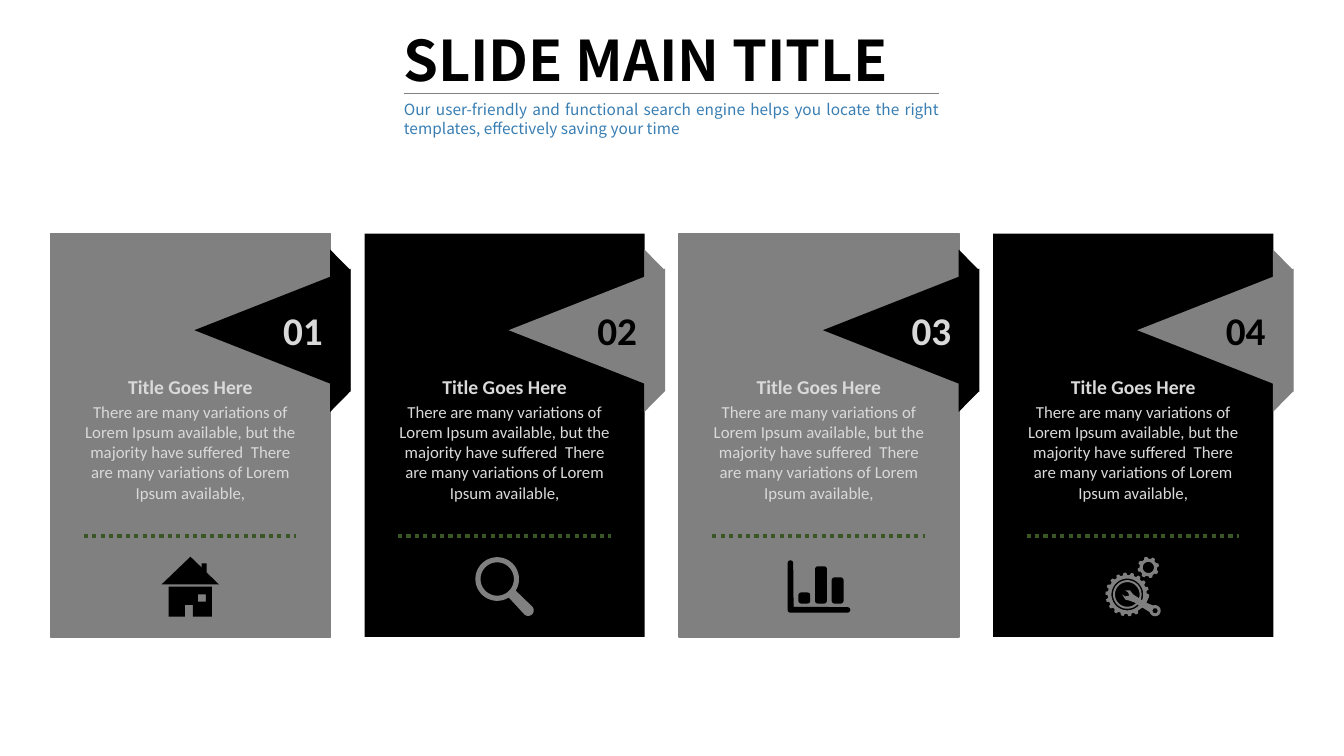
from copy import deepcopy
from math import cos, radians, sin

from pptx import Presentation
from pptx.dml.color import RGBColor
from pptx.enum import dml, shapes, text
from pptx.oxml.ns import qn
from pptx.oxml.xmlchemy import OxmlElement
from pptx.util import Cm, Pt

BLACK = RGBColor(0x00, 0x00, 0x00)
GRAY = RGBColor(0x80, 0x80, 0x80)
LIGHT = RGBColor(0xD9, 0xD9, 0xD9)
GREEN = RGBColor(0x38, 0x57, 0x23)
BLUE = RGBColor(0x39, 0x7E, 0xB3)

TITLE_FONT = "Noto Sans CJK SC"
CARD_LEFT, CARD_TOP, CARD_PITCH = 1.27, 5.89, 7.92
CARD_WIDTH, CARD_HEIGHT = 7.06, 10.16
ICON_Y = 14.78
CARD_TEXT = ("There are many variations of\vLorem Ipsum available, but the majority "
             "have suffered  There\vare many variations of Lorem\vIpsum available,")


# Outlines: points in cm around the icon centre
def arc(cx, cy, r, start=0, end=360, step=6):
    n = max(2, round(abs(end - start) / step))
    angles = [radians(start + (end - start) * i / n) for i in range(n + 1)]
    return [(cx + r * cos(a), cy + r * sin(a)) for a in angles]


def box(x1, y1, x2, y2):
    return [(x1, y1), (x2, y1), (x2, y2), (x1, y2)]


def round_box(x1, y1, x2, y2, r=0.07):
    corners = [(x1 + r, y1 + r, 180), (x2 - r, y1 + r, 270),
               (x2 - r, y2 - r, 0), (x1 + r, y2 - r, 90)]
    return [pt for cx, cy, a in corners for pt in arc(cx, cy, r, a, a + 90, 30)]


def cog(cx, cy, r, depth, teeth, start=0, end=360):
    pitch = 360 / teeth
    points = []
    for i in range(round((end - start) / pitch)):
        a = start + i * pitch
        points += arc(cx, cy, r - depth, a, a + pitch * 0.35)
        points += arc(cx, cy, r, a + pitch * 0.5, a + pitch * 0.85)
    return points


def house():
    roof = [(-0.73, -0.05), (0, -0.75), (0.28, -0.48), (0.28, -0.58),
            (0.41, -0.58), (0.41, -0.35), (0.72, -0.05)]
    walls = [(-0.55, 0), (0.54, 0), (0.54, 0.76), (0.06, 0.76),
             (0.06, 0.46), (-0.14, 0.46), (-0.14, 0.76), (-0.55, 0.76)]
    return [roof, walls, box(0.19, 0.2, 0.39, 0.38)]


def magnifier():
    rim = arc(-0.19, -0.19, 0.55, 58, 392)
    handle_end = arc(0.59, 0.6, 0.14, -45, 135)
    return [rim + handle_end, arc(-0.19, -0.19, 0.42)]


def bar_chart():
    axes = (arc(-0.72, -0.59, 0.07, 180, 360, 30) + [(-0.64, 0.51)]
            + arc(0.72, 0.59, 0.07, -90, 90, 30) + arc(-0.72, 0.59, 0.07, 90, 180, 30))
    bars = [(-0.52, 0.15), (-0.1, -0.51), (0.32, -0.23)]
    return [axes] + [round_box(x, y, x + 0.3, 0.43) for x, y in bars]


def gears():
    cx, cy = -0.15, 0.2
    wheel = cog(cx, cy, 0.55, 0.06, 18, 50, 370)
    handle = [(0.33, 0.41)] + arc(0.55, 0.61, 0.14, -110, 165) + [(0.23, 0.53)]
    groove = arc(cx, cy, 0.4, 43, 382) + arc(cx, cy, 0.36, 380, 45)
    wrench = [(-0.08, 0.36), (-0.2, 0.33), (-0.28, 0.2), (-0.2, 0.25), (-0.1, 0.23),
              (-0.13, 0.15), (-0.2, 0.1), (-0.08, 0.1), (0, 0.2)]
    hub = arc(cx, cy, 0.31, 378, 45) + wrench
    bolt = arc(0.55, 0.61, 0.07, step=60)
    return [wheel + handle, groove, hub, bolt,
            cog(0.38, -0.48, 0.27, 0.05, 8), arc(0.38, -0.48, 0.14)]


# Element helpers
def paint(sp, fill, outline=None):
    sp.shadow.inherit = False
    sp.fill.solid()
    sp.fill.fore_color.rgb = fill
    if outline is None:
        sp.line.fill.background()
    else:
        sp.line.color.rgb = outline
        sp.line.width = Pt(1)


def add_block(s, kind, x, y, w, h, fill, outline=None, rotation=0):
    sp = s.shapes.add_shape(kind, Cm(x), Cm(y), Cm(w), Cm(h))
    sp.rotation = rotation
    paint(sp, fill, outline)
    return sp


def add_rule(s, x1, x2, y, color, width, dash=None):
    ln = s.shapes.add_connector(shapes.MSO_CONNECTOR.STRAIGHT, Cm(x1), Cm(y), Cm(x2), Cm(y))
    ln.line.color.rgb = color
    ln.line.width = Pt(width)
    if dash:
        ln.line.dash_style = dash
    ln._element.spPr.append(OxmlElement("a:effectLst"))


def add_icon(s, outlines, cx, cy, fill):
    placed = [[(Cm(cx + x), Cm(cy + y)) for x, y in o] for o in outlines]
    fb = s.shapes.build_freeform(*placed[0][0])
    for i, points in enumerate(placed):
        if i:
            fb.move_to(*points[0])
        fb.add_line_segments(points[1:], close=True)
    paint(fb.convert_to_shape(), fill)


def write(p, content, align, color, **font):
    p.text = content
    p.alignment = align
    for r in p.runs:
        for name, value in font.items():
            setattr(r.font, name, value)
        r.font.color.rgb = color
    for br in p._p.findall(qn("a:br")):
        br.insert(0, deepcopy(p.runs[0]._r.rPr))


def add_text(s, x, y, w, h):
    tf = s.shapes.add_textbox(Cm(x), Cm(y), Cm(w), Cm(h)).text_frame
    tf.word_wrap = True
    tf.auto_size = text.MSO_AUTO_SIZE.SHAPE_TO_FIT_TEXT
    return tf


def add_heading(s):
    justify = text.PP_ALIGN.JUSTIFY
    tf = add_text(s, 9.91, 0.51, 14.05, 1.98)
    write(tf.paragraphs[0], "SLIDE MAIN TITLE", justify, BLACK,
          name=TITLE_FONT, size=Pt(40), bold=True)
    tf = add_text(s, 9.93, 2.41, 14, 1.19)
    write(tf.paragraphs[0], "Our user-friendly and functional search engine helps you locate "
          "the right templates, effectively saving your time", justify, BLUE,
          name=TITLE_FONT, size=Pt(11))
    add_rule(s, 10.19, 23.67, 2.36, GRAY, 1)


def add_card(s, index, icon):
    x = CARD_LEFT + index * CARD_PITCH
    center = text.PP_ALIGN.CENTER
    if index % 2 == 0:
        fill, accent, number_color, outline = GRAY, BLACK, LIGHT, GRAY
    else:
        fill, accent, number_color, outline = BLACK, GRAY, BLACK, None
    add_block(s, shapes.MSO_SHAPE.RECTANGLE, x, CARD_TOP, CARD_WIDTH, CARD_HEIGHT, fill, outline)

    # Folded number tag
    fold = add_block(s, shapes.MSO_SHAPE.TRAPEZOID, x + 5.26, 8.08, 4.09, 0.51, accent, rotation=90)
    fold.adjustments[0] = 1.015
    tag = add_block(s, shapes.MSO_SHAPE.ISOSCELES_TRIANGLE, x + 4.05, 6.35, 3.1, 3.94,
                    accent, rotation=270)
    tf = tag.text_frame
    tf.word_wrap = False
    tf.vertical_anchor = text.MSO_ANCHOR.MIDDLE
    tf.margin_bottom = Cm(0.69)
    tf._txBody.bodyPr.set("vert", "vert")
    write(tf.paragraphs[0], f"{index + 1:02d}", center, number_color,
          name="Calibri", size=Pt(28), bold=True)

    # Text, dotted rule and icon
    add_rule(s, x + 0.84, x + 6.2, 13.51, GREEN, 3, dml.MSO_LINE.ROUND_DOT)
    tf = add_text(s, x + 0.23, 9.32, 6.6, 3.53)
    write(tf.paragraphs[0], "Title Goes Here", center, LIGHT,
          name="Calibri", size=Pt(14), bold=True)
    p = tf.add_paragraph()
    p.space_before = Pt(2.4)
    write(p, CARD_TEXT, center, LIGHT, name="Calibri", size=Pt(12), bold=False)
    add_icon(s, icon, x + CARD_WIDTH / 2, ICON_Y, accent)


def main():
    prs = Presentation()
    prs.slide_width, prs.slide_height = Cm(33.87), Cm(19.05)
    s = prs.slides.add_slide(prs.slide_layouts[6])
    for index, icon in enumerate([house(), magnifier(), bar_chart(), gears()]):
        add_card(s, index, icon)
    add_heading(s)
    prs.save("out.pptx")


if __name__ == "__main__":
    main()
